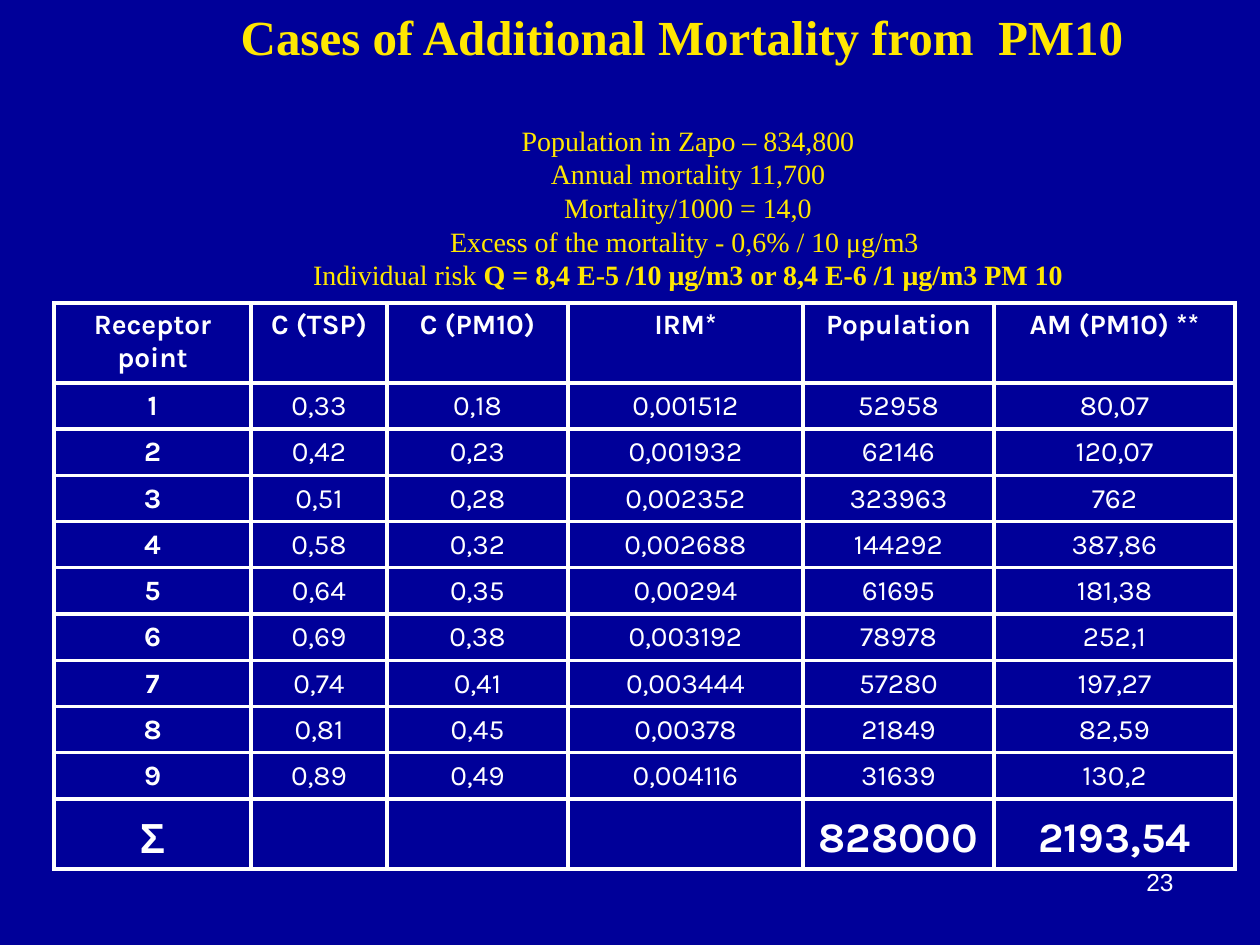
from dataclasses import dataclass

import pptx
import pptx.dml.color
import pptx.enum.text
import pptx.oxml
import pptx.oxml.ns
import pptx.util

RGBColor = pptx.dml.color.RGBColor
Pt = pptx.util.Pt
ALIGN = pptx.enum.text.PP_ALIGN
ANCHOR = pptx.enum.text.MSO_ANCHOR

NAVY = RGBColor(0x00, 0x00, 0x99)
YELLOW = RGBColor(0xFF, 0xE7, 0x01)
WHITE = RGBColor(0xFF, 0xFF, 0xFF)
SERIF, SANS, TABLE_FONT = "Times New Roman", "Arial", "Karla"
EMU_PER_PX = 914400 / 126


@dataclass
class Box:
    x: int
    y: int
    w: int
    h: int


@dataclass
class Reading:
    point: str
    tsp: str
    pm10: str
    irm: str
    population: str
    mortality: str

    def texts(self) -> list[str]:
        return [self.point, self.tsp, self.pm10, self.irm,
                self.population, self.mortality]


TITLE_BOX = Box(54, 69, 1152, 160)
TABLE_BOX = Box(54, 303, 1181, 553)
NUMBER_BOX = Box(924, 861, 262, 63)
TITLE_INDENT = 116

COLUMN_WIDTHS = [197, 136, 181, 235, 191, 241]
HEADER_HEIGHT, ROW_HEIGHT, TOTAL_HEIGHT = 78, 45, 70

FACTS = [
    "Population in Zapo – 834,800",
    "Annual mortality 11,700",
    "Mortality/1000 = 14,0",
    "Excess of the mortality - 0,6% / 10 μg/m3 ",
    "Individual risk ",
]
RISK = "Q = 8,4 E-5 /10 μg/m3 or 8,4 E-6 /1 μg/m3 PM 10"

HEADER = Reading("Receptor\npoint", "C (TSP)", "C (PM10)", "IRM*",
                 "Population", "AM (PM10) **")
READINGS = [
    Reading("1", "0,33", "0,18", "0,001512", "52958", "80,07"),
    Reading("2", "0,42", "0,23", "0,001932", "62146", "120,07"),
    Reading("3", "0,51", "0,28", "0,002352", "323963", "762"),
    Reading("4", "0,58", "0,32", "0,002688", "144292", "387,86"),
    Reading("5", "0,64", "0,35", "0,00294", "61695", "181,38"),
    Reading("6", "0,69", "0,38", "0,003192", "78978", "252,1"),
    Reading("7", "0,74", "0,41", "0,003444", "57280", "197,27"),
    Reading("8", "0,81", "0,45", "0,00378", "21849", "82,59"),
    Reading("9", "0,89", "0,49", "0,004116", "31639", "130,2"),
]
TOTAL = Reading("Σ", "", "", "", "828000", "2193,54")


def px(n: int) -> int:
    return round(n * EMU_PER_PX)


def place(box: Box) -> tuple[int, int, int, int]:
    return px(box.x), px(box.y), px(box.w), px(box.h)


def add_run(p, text: str, *, size: int, font: str, color: RGBColor = WHITE,
            bold: bool = False, align=ALIGN.CENTER) -> None:
    p.alignment = align
    r = p.add_run()
    r.text = text
    r.font.size = Pt(size)
    r.font.name = font
    r.font.bold = bold
    r.font.color.rgb = color


def add_text_box(s, box: Box, anchor=ANCHOR.TOP):
    tf = s.shapes.add_textbox(*place(box)).text_frame
    tf.word_wrap = True
    tf.vertical_anchor = anchor
    return tf


def add_title(s) -> None:
    tf = add_text_box(s, TITLE_BOX, ANCHOR.MIDDLE)
    tf.margin_top = tf.margin_bottom = 0
    p = tf.paragraphs[0]
    add_run(p, "Cases of Additional Mortality from  PM10 ", size=28,
            font=SERIF, color=YELLOW, bold=True)
    p.space_after = Pt(33)
    for fact in FACTS:
        p = tf.add_paragraph()
        p.line_spacing = Pt(19.25)
        add_run(p, fact, size=16, font=SERIF, color=YELLOW)
    add_run(p, RISK, size=16, font=SERIF, color=YELLOW, bold=True)
    for p in tf.paragraphs:
        pPr = p._p.get_or_add_pPr()
        pPr.set("marL", str(px(TITLE_INDENT)))
        pPr.set("indent", "0")


def set_borders(cell, color: RGBColor, width: float) -> None:
    tcPr = cell._tc.get_or_add_tcPr()
    for side in ("lnL", "lnR", "lnT", "lnB"):
        tcPr.append(pptx.oxml.parse_xml(
            f'<a:{side} {pptx.oxml.ns.nsdecls("a")} w="{Pt(width)}">'
            f'<a:solidFill><a:srgbClr val="{color}"/></a:solidFill>'
            f'</a:{side}>'))


def fill_cell(cell, text: str, *, size: int, font: str, bold: bool,
              anchor) -> None:
    set_borders(cell, WHITE, 2.25)
    cell.fill.background()
    cell.vertical_anchor = anchor
    tf = cell.text_frame
    for i, line in enumerate(text.split("\n") if text else []):
        p = tf.add_paragraph() if i else tf.paragraphs[0]
        add_run(p, line, size=size, font=font, bold=bold)


def add_readings_table(s) -> None:
    rows = [HEADER, *READINGS, TOTAL]
    heights = [HEADER_HEIGHT, *[ROW_HEIGHT] * len(READINGS), TOTAL_HEIGHT]
    table = s.shapes.add_table(len(rows), len(COLUMN_WIDTHS),
                               *place(TABLE_BOX)).table
    table.first_row = table.horz_banding = False
    for column, width in zip(table.columns, COLUMN_WIDTHS):
        column.width = px(width)
    for i, (reading, height) in enumerate(zip(rows, heights)):
        table.rows[i].height = px(height)
        for j, text in enumerate(reading.texts()):
            fill_cell(
                table.cell(i, j), text,
                size=24 if reading is TOTAL else 16,
                font=SANS if text == TOTAL.point else TABLE_FONT,
                bold=j == 0 or reading in (HEADER, TOTAL),
                anchor=ANCHOR.TOP if reading is HEADER else ANCHOR.BOTTOM)


def main() -> None:
    prs = pptx.Presentation()
    prs.slide_width, prs.slide_height = px(1260), px(945)
    s = prs.slides.add_slide(prs.slide_layouts[6])
    s.background.fill.solid()
    s.background.fill.fore_color.rgb = NAVY

    # Heading and key figures
    add_title(s)

    # Readings by receptor point
    add_readings_table(s)

    # Page number
    tf = add_text_box(s, NUMBER_BOX)
    add_run(tf.paragraphs[0], "23", size=14, font=SANS, align=ALIGN.RIGHT)

    prs.save("out.pptx")


if __name__ == "__main__":
    main()
